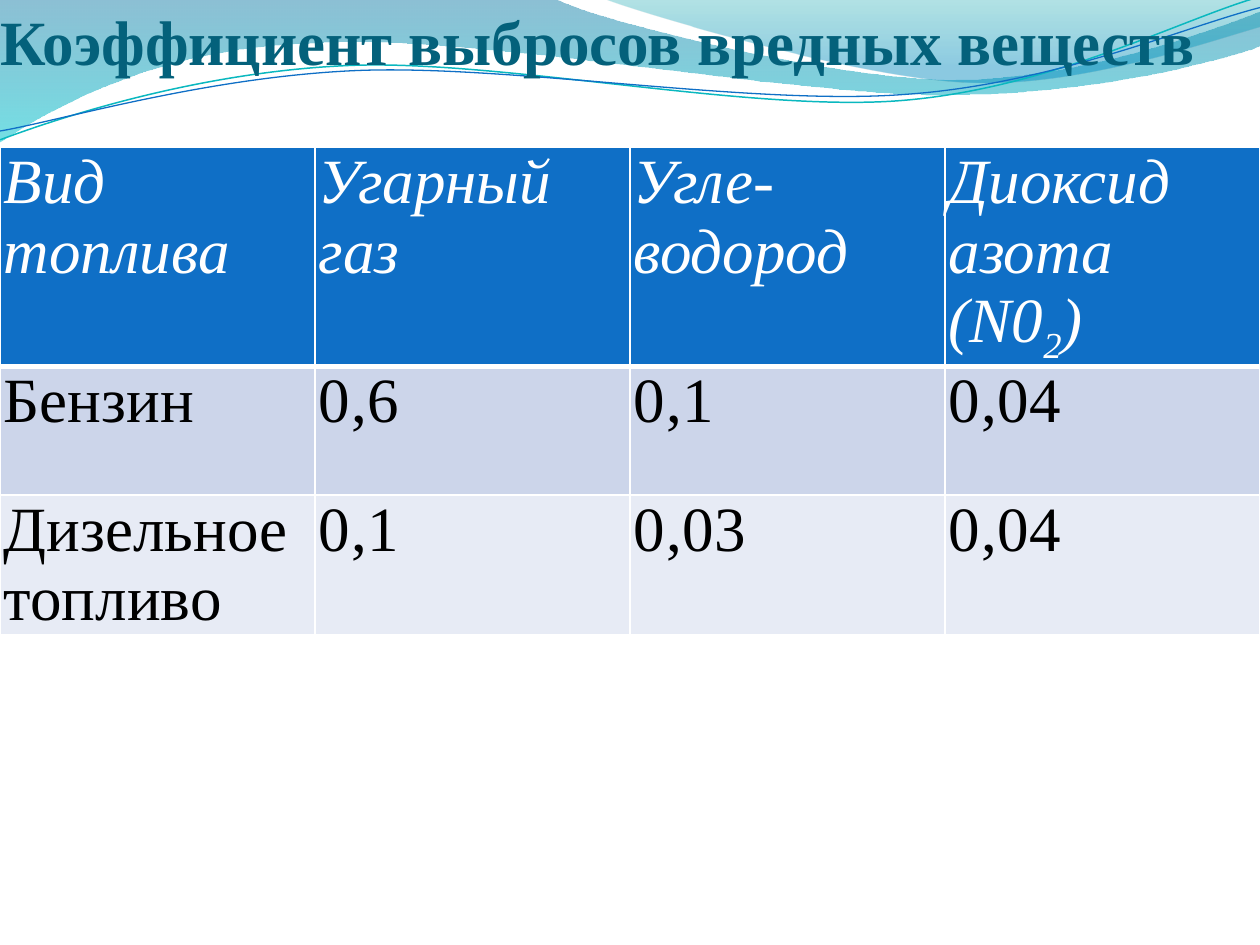
from math import cos, radians, sin
from pptx import Presentation
from pptx.dml.color import RGBColor
from pptx.enum.text import MSO_ANCHOR, MSO_AUTO_SIZE, PP_ALIGN
from pptx.oxml.ns import qn
from pptx.util import Inches, Pt
from lxml.etree import SubElement

TEAL = RGBColor(0x04, 0x61, 0x7B)
BLUE = RGBColor(0x0F, 0x6F, 0xC6)
AQUA = RGBColor(0x0A, 0xB8, 0xBF)
WHITE = RGBColor(0xFF, 0xFF, 0xFF)
BLACK = RGBColor(0x00, 0x00, 0x00)
BANDS = [BLUE, RGBColor(0xCC, 0xD5, 0xEA), RGBColor(0xE7, 0xEB, 0xF5)]

TITLE = "Коэффициент выбросов вредных веществ"
HEAD = ["Вид топлива", "Угарный газ", "Угле-водород", ("Диоксид азота (N0", "2", ")")]
ROWS = [
    HEAD,
    ["Бензин", "0,6", "0,1", "0,04"],
    ["Дизельное топливо", "0,1", "0,03", "0,04"],
]

FILLS = [
    ([(0, 0), (4.4, -0.01),
      (4.76, 0.17, 6.64, 0.63, 7.58, 0.63), (8.53, 0.63, 9.58, 0.26, 10, 0.09),
      (10.01, 0.36),
      (9.83, 0.44, 8.7, 0.76, 7.46, 0.75), (6.22, 0.75, 3.82, 0.28, 2.57, 0.34),
      (1.29, 0.36, 0.46, 0.83, -0.01, 1.13)],
     [(0, RGBColor(0x00, 0x74, 0xA1), 45), (1, RGBColor(0x00, 0xC6, 0xCF), 55)]),
    ([(4.79, -0.01),
      (5.09, 0.11, 6.82, 0.62, 7.69, 0.65), (8.56, 0.69, 9.61, 0.32, 10, 0.21),
      (10, 0)],
     [(0, RGBColor(0x00, 0xA1, 0xA9), 30), (0.8, RGBColor(0x00, 0x8B, 0xBF), 45)]),
]
LINES = [
    ([(0, 1.11), (0.48, 0.93, 1.58, 0.57, 2.77, 0.52),
      (3.95, 0.47, 5.93, 0.89, 7.13, 0.8), (8.33, 0.71, 9.38, 0.15, 9.98, -0.02)],
     AQUA, 0.85),
    ([(0, 1.04), (0.47, 0.96, 1.64, 0.61, 2.83, 0.56),
      (4.03, 0.51, 5.97, 0.84, 7.17, 0.75), (8.36, 0.67, 9.41, 0.21, 10, 0.06)],
     BLUE, 0.75),
]
TILT = 2.7
HUB = (4.99, 0.58)


def put(para, text, color=BLACK, bold=False, italic=False, base=0, gap=0):
    run = para.add_run()
    run.text = text
    font = run.font
    font.name, font.size = "Times New Roman", Pt(36)
    font.bold, font.italic = bold, italic
    font.color.rgb = color
    props = run._r.get_or_add_rPr()
    if base:
        props.set("baseline", str(base * 1000))
    if gap:
        props.set("spc", str(int(gap * 100)))


def turn(x, y, angle):
    dx, dy, a = x - HUB[0], y - HUB[1], radians(angle)
    return (Inches(HUB[0] + dx * cos(a) - dy * sin(a)),
            Inches(HUB[1] + dx * sin(a) + dy * cos(a)))


def wave(shapes, path, close, angle=0):
    parts = [[turn(x, y, angle) for x, y in zip(part[::2], part[1::2])]
             for part in path]
    pen = shapes.build_freeform(*parts[0][0])
    pen.add_line_segments([part[-1] for part in parts[1:]], close=close)
    shape = pen.convert_to_shape()
    shape.shadow.inherit = False
    for step, part in zip(list(shape.element.iter(qn("a:lnTo"))), parts[1:]):
        if len(part) == 3:
            curve = SubElement(step.getparent(), qn("a:cubicBezTo"))
            for x, y in part:
                SubElement(curve, qn("a:pt"), x=str(x - shape.left), y=str(y - shape.top))
            step.getparent().replace(step, curve)
    shape.rotation = -angle % 360
    return shape


def edge(cell, sides):
    props = cell._tc.get_or_add_tcPr()
    for side, width in sides.items():
        line = SubElement(props, qn("a:ln" + side), w=str(Pt(width)))
        fill = SubElement(line, qn("a:solidFill"))
        SubElement(fill, qn("a:srgbClr"), val=str(WHITE))


def main():
    deck = Presentation()
    deck.slide_width, deck.slide_height = Inches(10), Inches(7.5)
    slide = deck.slides.add_slide(deck.slide_layouts[5])
    shapes = slide.shapes

    for path, stops in FILLS:
        shape = wave(shapes, path, True)
        shape.line.fill.background()
        shape.fill.gradient()
        shape.fill.gradient_angle = 270
        for stop, (place, color, _) in zip(shape.fill.gradient_stops, stops):
            stop.position, stop.color.rgb = place, color
        for tint, (_, _, alpha) in zip(shape.element.iter(qn("a:srgbClr")), stops):
            SubElement(tint, qn("a:alpha"), val=str(alpha * 1000))
    for path, color, width in LINES:
        shape = wave(shapes, path, False, TILT)
        shape.fill.background()
        shape.line.color.rgb = color
        shape.line.width = Pt(width)

    title = shapes.title
    title.left, title.top = 0, 0
    title.width, title.height = deck.slide_width, Inches(0.62)
    frame = title.text_frame
    frame.word_wrap, frame.auto_size = True, MSO_AUTO_SIZE.NONE
    frame.vertical_anchor = MSO_ANCHOR.BOTTOM
    frame.margin_left = frame.margin_right = frame.margin_bottom = 0
    frame.margin_top = Inches(0.05)
    frame.paragraphs[0].alignment = PP_ALIGN.LEFT
    put(frame.paragraphs[0], TITLE, color=TEAL, bold=True)
    title.element.getparent().append(title.element)

    tall = Inches(1.02)
    table = shapes.add_table(len(ROWS), len(HEAD), 0, Inches(1.17),
                             deck.slide_width, tall * len(ROWS)).table
    for r, row in enumerate(ROWS):
        table.rows[r].height = tall
        for c, text in enumerate(row):
            cell = table.cell(r, c)
            if r == 0:
                edge(cell, {"L": 1, "R": 1, "T": 1, "B": 3})
            cell.fill.solid()
            cell.fill.fore_color.rgb = BANDS[r]
            cell.margin_left = cell.margin_right = Inches(0.03)
            cell.margin_top = cell.margin_bottom = 0
            para = cell.text_frame.paragraphs[0]
            para.alignment = PP_ALIGN.LEFT if r else PP_ALIGN.JUSTIFY
            parts = (text,) if isinstance(text, str) else text
            for n, part in enumerate(parts):
                put(para, part, color=BLACK if r else WHITE, italic=r == 0,
                    base=-25 if n == 1 else 0, gap=0.5 if r and c else 0)

    deck.save("out.pptx")


if __name__ == "__main__":
    main()
